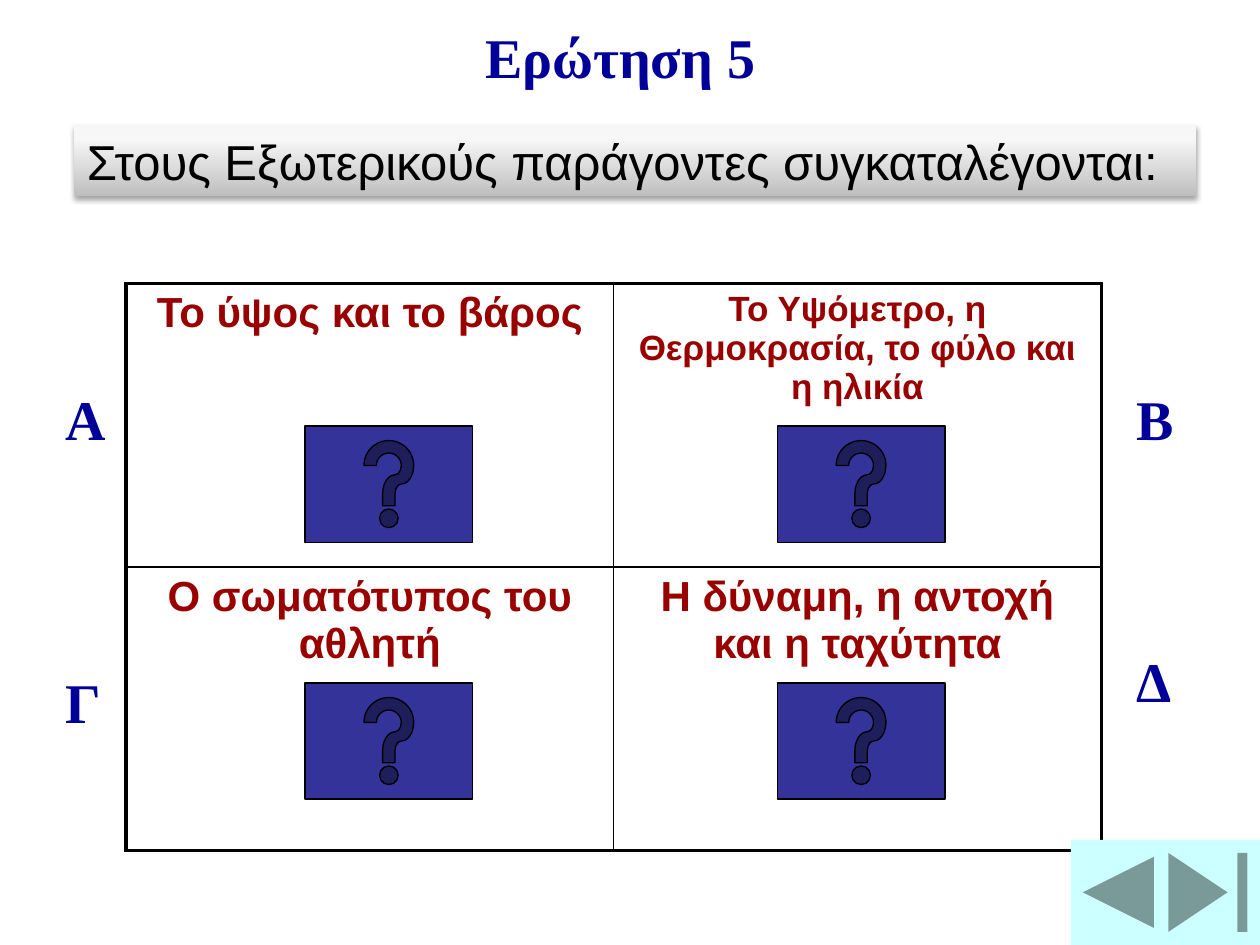
from typing import NamedTuple

from lxml import etree
from pptx import Presentation
from pptx.dml.color import RGBColor
from pptx.enum.shapes import MSO_SHAPE
from pptx.enum.text import MSO_ANCHOR, MSO_AUTO_SIZE, PP_ALIGN
from pptx.oxml.ns import qn
from pptx.util import Cm, Pt

CENTER, LEFT = PP_ALIGN.CENTER, PP_ALIGN.LEFT
MIDDLE = MSO_ANCHOR.MIDDLE
FIT_SHAPE = MSO_AUTO_SIZE.SHAPE_TO_FIT_TEXT
RECT = MSO_SHAPE.RECTANGLE
HELP = MSO_SHAPE.ACTION_BUTTON_HELP
END = MSO_SHAPE.ACTION_BUTTON_END
BACK = MSO_SHAPE.ACTION_BUTTON_BACK_OR_PREVIOUS

BLACK, WHITE = "000000", "FFFFFF"
NAVY, DARK_RED = "000099", "990000"
BUTTON_BLUE, NAV_CYAN = "333399", "CCFFFF"
COL_W, ROW_H = 9.83, 5.715


class Box(NamedTuple):
    left: float
    top: float
    width: float
    height: float

    def lengths(self) -> list:
        return [Cm(v) for v in self]


class Heading(NamedTuple):
    text: str
    box: Box


class Button(NamedTuple):
    kind: int
    box: Box
    fill: str
    outlined: bool


class Answer(NamedTuple):
    text: str
    size: int


HEADINGS = [
    Heading("Α", Box(1.07, 7.62, 1.27, 1.6)),
    Heading("Γ", Box(1.07, 13.34, 1.27, 1.6)),
    Heading("Β", Box(22.66, 7.62, 1.27, 1.6)),
    Heading("Δ", Box(22.66, 12.9, 1.27, 1.6)),
    Heading("Ερώτηση 5", Box(9.53, 0.33, 6.78, 1.6)),
]
ANSWERS = [
    [Answer("Το ύψος και το βάρος", 24),
     Answer("Το Υψόμετρο, η Θερμοκρασία, το φύλο και η ηλικία", 20)],
    [Answer("Ο σωματότυπος του αθλητή", 24),
     Answer("Η δύναμη, η αντοχή και η ταχύτητα", 24)],
]
BUTTONS = [
    Button(HELP, Box(left, top, 3.38, 2.34), BUTTON_BLUE, True)
    for left in (6.15, 15.67) for top in (8.59, 13.77)
] + [
    Button(END, Box(23.29, 16.93, 2.12, 2.12), NAV_CYAN, False),
    Button(BACK, Box(21.59, 16.93, 1.91, 2.12), NAV_CYAN, False),
]
BANNER_STOPS = [(0, "BEBEBE"), (80, "F7F7F7"), (100, "F8F8F8")]


def rgb(value: str) -> RGBColor:
    return RGBColor.from_string(value)


def sub(parent, tag: str, **attrs):
    """Append a DrawingML child element."""
    return etree.SubElement(parent, qn(tag), {k: str(v) for k, v in attrs.items()})


def write(tf, text: str, size: int, font: str, color: str, bold=True, align=LEFT):
    tf.word_wrap = True
    tf.text = text
    p = tf.paragraphs[0]
    p.alignment = align
    r = p.runs[0]
    r.font.size, r.font.name, r.font.bold = Pt(size), font, bold
    r.font.color.rgb = rgb(color)


def add_heading(slide, heading: Heading):
    tf = slide.shapes.add_textbox(*heading.box.lengths()).text_frame
    write(tf, heading.text, 32, "Times New Roman", NAVY)
    tf.auto_size = FIT_SHAPE


def add_button(slide, button: Button):
    sp = slide.shapes.add_shape(button.kind, *button.box.lengths())
    sp.shadow.inherit = False
    sp.fill.solid()
    sp.fill.fore_color.rgb = rgb(button.fill)
    if button.outlined:
        sp.line.color.rgb = rgb(BLACK)
        sp.line.width = Pt(0.75)
    else:
        sp.line.fill.background()


def set_borders(cell, widths: dict):
    tc_pr = cell._tc.get_or_add_tcPr()
    for side, width in widths.items():
        ln = sub(tc_pr, f"a:ln{side}", w=Pt(width))
        sub(sub(ln, "a:solidFill"), "a:srgbClr", val=BLACK)


def add_answers(slide):
    """Two by two table with a heavy frame and thin inner rules."""
    rows, cols = len(ANSWERS), len(ANSWERS[0])
    box = Box(2.54, 5.715, cols * COL_W, rows * ROW_H)
    frame = slide.shapes.add_table(rows, cols, *box.lengths())
    table = frame.table
    table.first_row = table.horz_banding = False
    for i, row in enumerate(ANSWERS):
        for j, answer in enumerate(row):
            cell = table.cell(i, j)
            outer = {"L": j == 0, "R": j == cols - 1, "T": i == 0, "B": i == rows - 1}
            set_borders(cell, {s: 2.25 if edge else 1 for s, edge in outer.items()})
            cell.fill.solid()
            cell.fill.fore_color.rgb = rgb(WHITE)
            write(cell.text_frame, answer.text, answer.size, "Arial", DARK_RED, align=CENTER)


def add_banner(slide, text: str):
    """Question bar with a three-stop gradient and a soft shadow below."""
    sp = slide.shapes.add_shape(RECT, *Box(1.5, 2.51, 22.61, 1.45).lengths())
    sp.line.fill.background()
    sp.fill.gradient()
    sp.fill.gradient_angle = 90
    sp_pr = sp._element.spPr
    stops = sp_pr.find(qn("a:gradFill")).find(qn("a:gsLst"))
    for old in list(stops):
        stops.remove(old)
    for pos, color in BANNER_STOPS:
        sub(sub(stops, "a:gs", pos=pos * 1000), "a:srgbClr", val=color)

    sp.shadow.inherit = False
    shadow = sub(sp_pr.find(qn("a:effectLst")), "a:outerShdw", blurRad=Pt(3.1),
                 dist=Pt(1.8), dir=90 * 60000, rotWithShape=0)
    sub(sub(shadow, "a:srgbClr", val=BLACK), "a:alpha", val=35000)

    write(sp.text_frame, text, 28, "Arial", BLACK, bold=False)
    sp.text_frame.vertical_anchor = MIDDLE
    sp.text_frame.auto_size = FIT_SHAPE


def main():
    prs = Presentation()
    prs.slide_width, prs.slide_height = Cm(25.4), Cm(19.05)
    slide = prs.slides.add_slide(prs.slide_layouts[6])
    add_answers(slide)
    for heading in HEADINGS:
        add_heading(slide, heading)
    for button in BUTTONS:
        add_button(slide, button)
    add_banner(slide, "Στους Εξωτερικούς παράγοντες συγκαταλέγονται:")
    prs.save("out.pptx")


if __name__ == "__main__":
    main()
